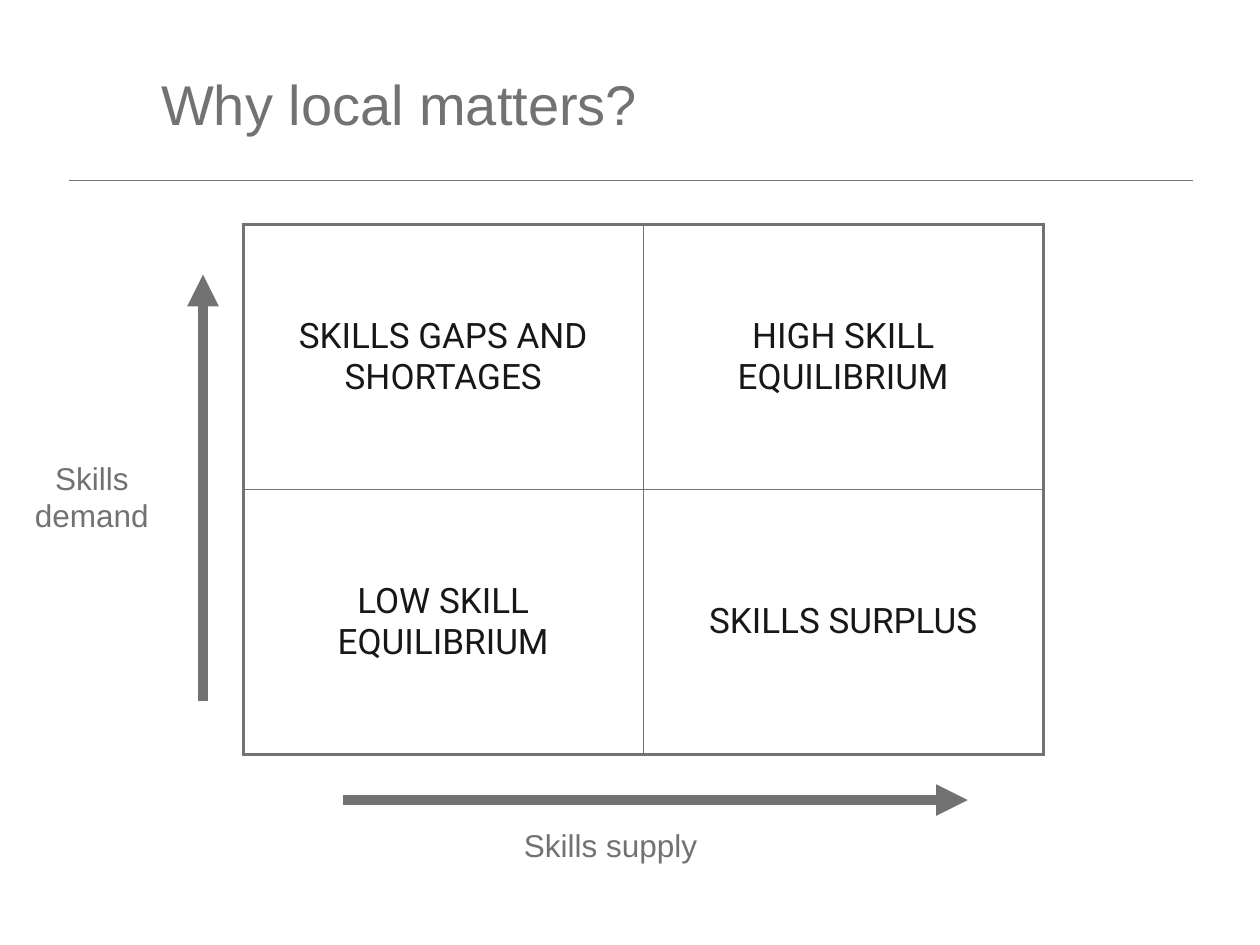
from lxml.etree import SubElement
from pptx import Presentation
from pptx.dml.color import RGBColor
from pptx.enum.shapes import MSO_CONNECTOR
from pptx.enum.text import MSO_ANCHOR, PP_ALIGN
from pptx.oxml.ns import qn
from pptx.util import Pt

COLORS = {"gray": "727272", "ink": "171717"}
GRID = [
    ["SKILLS GAPS AND SHORTAGES", "HIGH SKILL EQUILIBRIUM"],
    ["LOW SKILL EQUILIBRIUM", "SKILLS SURPLUS"],
]


def write(frame, text, size=18, font="Arial", color="gray",
          align=PP_ALIGN.LEFT, anchor=MSO_ANCHOR.TOP):
    frame.word_wrap = True
    frame.vertical_anchor = anchor
    par = frame.paragraphs[0]
    par.alignment = align
    run = par.add_run()
    run.text = text
    run.font.size = Pt(size)
    run.font.name = font
    run.font.color.rgb = RGBColor.from_string(COLORS[color])


def add_text(slide, box, text, **form):
    shape = slide.shapes.add_textbox(*map(Pt, box))
    write(shape.text_frame, text, **form)


def add_line(slide, start, end, width, arrow=False):
    line = slide.shapes.add_connector(
        MSO_CONNECTOR.STRAIGHT, *map(Pt, (*start, *end)))
    line.line.width = Pt(width)
    line.line.color.rgb = RGBColor.from_string(COLORS["gray"])
    if arrow:
        SubElement(line.line._get_or_add_ln(), qn("a:tailEnd"), type="triangle")
    SubElement(line._element.spPr, qn("a:effectLst"))


def add_edge(cell, side, width):
    """Draw one cell border; side is L, R, T or B."""
    edge = SubElement(cell._tc.get_or_add_tcPr(), qn(f"a:ln{side}"),
                      w=str(Pt(width)))
    fill = SubElement(edge, qn("a:solidFill"))
    SubElement(fill, qn("a:srgbClr"), val=COLORS["gray"])


def add_grid(slide, box, data):
    """Add a table with a thick frame and thin inner lines."""
    rows, cols = len(data), len(data[0])
    table = slide.shapes.add_table(rows, cols, *map(Pt, box)).table
    table.first_row = table.horz_banding = False
    for r, texts in enumerate(data):
        for c, text in enumerate(texts):
            cell = table.cell(r, c)
            outer = {"L": c == 0, "R": c == cols - 1,
                     "T": r == 0, "B": r == rows - 1}
            for side, thick in outer.items():
                add_edge(cell, side, 2.25 if thick else 1)
            cell.fill.background()
            write(cell.text_frame, text, size=20, font="Roboto",
                  color="ink", align=PP_ALIGN.CENTER)
            cell.vertical_anchor = MSO_ANCHOR.MIDDLE


def main():
    deck = Presentation()
    deck.slide_width, deck.slide_height = Pt(720), Pt(540)
    slide = deck.slides.add_slide(deck.slide_layouts[6])

    add_line(slide, (39.5, 103), (682, 103), 0.5)
    add_text(slide, (85, 18.7, 584, 80.6), "Why local matters?",
             size=32, anchor=MSO_ANCHOR.MIDDLE)
    add_grid(slide, (139, 128.2, 457.2, 303), GRID)
    add_line(slide, (116, 400.5), (116, 157), 6, arrow=True)
    add_text(slide, (0, 258.5, 105, 51), "Skills demand",
             align=PP_ALIGN.CENTER)
    add_line(slide, (195.8, 457.2), (553, 457.2), 6, arrow=True)
    add_text(slide, (292.3, 468.7, 164, 29), "Skills supply")

    deck.save("out.pptx")


if __name__ == "__main__":
    main()
